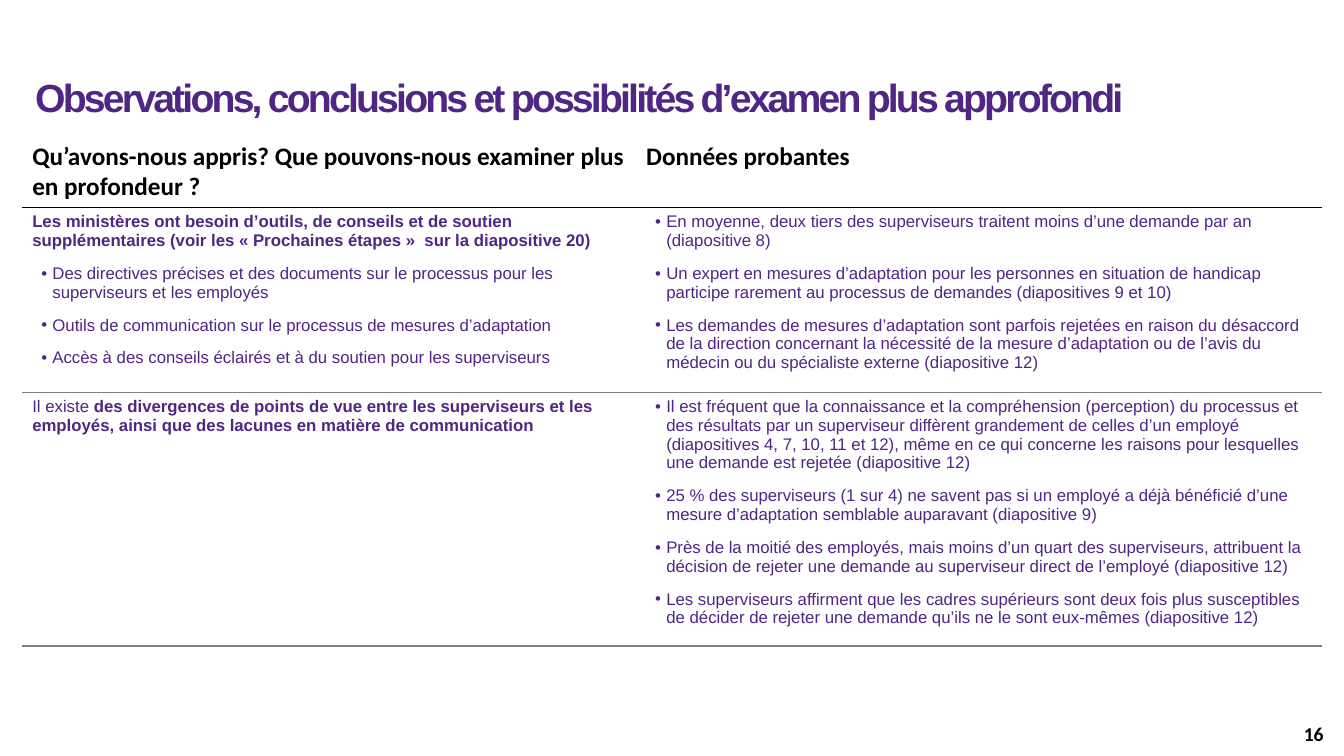
from dataclasses import dataclass
from typing import Any

from lxml import etree
from pptx import Presentation
from pptx.dml.color import RGBColor
from pptx.enum.text import MSO_ANCHOR, MSO_AUTO_SIZE, PP_ALIGN
from pptx.oxml.ns import qn
from pptx.util import Pt

PURPLE = RGBColor(0x4F, 0x26, 0x84)
BLACK = RGBColor(0x00, 0x00, 0x00)
GRAY = RGBColor(0x80, 0x80, 0x80)
LEFT = PP_ALIGN.LEFT
RIGHT = PP_ALIGN.RIGHT
TOP = MSO_ANCHOR.TOP
MIDDLE = MSO_ANCHOR.MIDDLE
NO_FIT = MSO_AUTO_SIZE.NONE
GROW = MSO_AUTO_SIZE.SHAPE_TO_FIT_TEXT
PLAIN_TABLE_STYLE = "{2D5ABB26-0587-4C30-8999-92F81FD0307C}"

TITLE_FONT = {"name": "Arial", "size": Pt(28), "bold": True}
HEADER_FONT = {"name": "Calibri", "size": Pt(18), "bold": True}
BODY_FONT = {"name": "Arial", "size": Pt(12), "bold": False}
BODY_BOLD_FONT = BODY_FONT | {"bold": True}
NUMBER_FONT = {"name": "Calibri", "size": Pt(14), "bold": True}


@dataclass(frozen=True)
class Span:
    text: str
    font: dict[str, Any]
    color: RGBColor = PURPLE


@dataclass(frozen=True)
class Entry:
    spans: tuple[Span, ...]
    bullet: bool = False


@dataclass(frozen=True)
class TableRow:
    height: float
    line_color: RGBColor
    cells: tuple[list[Entry], list[Entry]]


@dataclass(frozen=True)
class Label:
    box: tuple[float, float, float, float]
    span: Span
    frame: dict[str, Any]
    paragraph: dict[str, Any]
    tracking: int = 0


def header(text: str) -> list[Entry]:
    return [Entry((Span(text, HEADER_FONT, BLACK),))]


def bullets(*texts: str) -> list[Entry]:
    return [Entry((Span(text, BODY_FONT),), True) for text in texts]


TITLE = Label(
    (25.2, 54.7, 890.6, 33.1),
    Span("Observations, conclusions et possibilités d’examen plus approfondi", TITLE_FONT),
    {"word_wrap": True, "auto_size": GROW, "vertical_anchor": TOP, "margin_left": 0,
     "margin_right": 0, "margin_top": Pt(1.44), "margin_bottom": Pt(1.44)},
    {"alignment": LEFT, "line_spacing": 0.9},
    -200,
)
PAGE_NUMBER = Label(
    (736.6, 509.8, 216, 28.8),
    Span("16", NUMBER_FONT, BLACK),
    {"word_wrap": True, "auto_size": NO_FIT, "vertical_anchor": MIDDLE},
    {"alignment": RIGHT},
)

TABLE_LEFT, TABLE_TOP = 15.84, 97.2
COLUMN_WIDTHS = (438.5, 490.3)
ROWS = (
    TableRow(51, BLACK, (
        header("Qu’avons-nous appris? Que pouvons-nous examiner plus en profondeur ?"),
        header("Données probantes"),
    )),
    TableRow(132, GRAY, (
        [Entry((Span(
            "Les ministères ont besoin d’outils, de conseils et de soutien supplémentaires "
            "(voir les « Prochaines étapes »  sur la diapositive 20)", BODY_BOLD_FONT),))]
        + bullets(
            "Des directives précises et des documents sur le processus pour les superviseurs "
            "et les employés",
            "Outils de communication sur le processus de mesures d’adaptation",
            "Accès à des conseils éclairés et à du soutien pour les superviseurs",
        ),
        bullets(
            "En moyenne, deux tiers des superviseurs traitent moins d’une demande par an "
            "(diapositive 8)",
            "Un expert en mesures d’adaptation pour les personnes en situation de handicap "
            "participe rarement au processus de demandes (diapositives 9 et 10)",
            "Les demandes de mesures d’adaptation sont parfois rejetées en raison du désaccord "
            "de la direction concernant la nécessité de la mesure d’adaptation ou de l’avis du "
            "médecin ou du spécialiste externe (diapositive 12)",
        ),
    )),
    TableRow(171, GRAY, (
        [Entry((
            Span("Il existe ", BODY_FONT),
            Span("des divergences de points de vue entre les superviseurs et les employés, "
                 "ainsi que des lacunes en matière de communication", BODY_BOLD_FONT),
        ))],
        bullets(
            "Il est fréquent que la connaissance et la compréhension (perception) du processus "
            "et des résultats par un superviseur diffèrent grandement de celles d’un employé "
            "(diapositives 4, 7, 10, 11 et 12), même en ce qui concerne les raisons pour "
            "lesquelles une demande est rejetée (diapositive 12)",
            "25 % des superviseurs (1 sur 4) ne savent pas si un employé a déjà bénéficié d’une "
            "mesure d’adaptation semblable auparavant (diapositive 9)",
            "Près de la moitié des employés, mais moins d’un quart des superviseurs, attribuent "
            "la décision de rejeter une demande au superviseur direct de l’employé (diapositive 12)",
            "Les superviseurs affirment que les cadres supérieurs sont deux fois plus susceptibles "
            "de décider de rejeter une demande qu’ils ne le sont eux-mêmes (diapositive 12)",
        ),
    )),
)


def apply(target: Any, values: dict[str, Any]) -> None:
    for name, value in values.items():
        setattr(target, name, value)


def add_span(paragraph: Any, span: Span) -> Any:
    run = paragraph.add_run()
    run.text = span.text
    apply(run.font, span.font)
    run.font.color.rgb = span.color
    return run


def add_label(slide: Any, label: Label) -> None:
    shape = slide.shapes.add_textbox(*map(Pt, label.box))
    apply(shape.text_frame, label.frame)
    paragraph = shape.text_frame.paragraphs[0]
    apply(paragraph, label.paragraph)
    run = add_span(paragraph, label.span)
    if label.tracking:
        run.font._element.set("spc", str(label.tracking))


def add_bullet(paragraph: Any) -> None:
    properties = paragraph._p.get_or_add_pPr()
    properties.set("marL", str(Pt(14.4)))
    properties.set("indent", str(Pt(-7.92)))
    etree.SubElement(properties, qn("a:buFont"), typeface="Arial")
    etree.SubElement(properties, qn("a:buChar"), char="•")


def fill_cell(cell: Any, entries: list[Entry]) -> None:
    for index, entry in enumerate(entries):
        frame = cell.text_frame
        paragraph = frame.add_paragraph() if index else frame.paragraphs[0]
        if entry.bullet:
            add_bullet(paragraph)
        if index:
            paragraph.space_before = Pt(10)
        for span in entry.spans:
            add_span(paragraph, span)


def add_border(cell: Any, side: str, color: RGBColor) -> None:
    line = etree.SubElement(cell._tc.get_or_add_tcPr(), qn(f"a:{side}"), w=str(Pt(1)))
    fill = etree.SubElement(line, qn("a:solidFill"))
    etree.SubElement(fill, qn("a:srgbClr"), val=str(color))


def add_findings_table(slide: Any) -> None:
    width = sum(COLUMN_WIDTHS)
    height = sum(row.height for row in ROWS)
    table = slide.shapes.add_table(
        len(ROWS), len(COLUMN_WIDTHS), *map(Pt, (TABLE_LEFT, TABLE_TOP, width, height))
    ).table
    apply(table, {"first_row": False, "horz_banding": False})
    table._tbl.tblPr.find(qn("a:tableStyleId")).text = PLAIN_TABLE_STYLE
    for column, column_width in zip(table.columns, COLUMN_WIDTHS):
        column.width = Pt(column_width)
    for row_index, row in enumerate(ROWS):
        table.rows[row_index].height = Pt(row.height)
        for column_index, entries in enumerate(row.cells):
            cell = table.cell(row_index, column_index)
            fill_cell(cell, entries)
            if row_index:
                add_border(cell, "lnT", ROWS[row_index - 1].line_color)
            add_border(cell, "lnB", row.line_color)
            cell.fill.background()


def main() -> None:
    presentation = Presentation()
    apply(presentation, {"slide_width": Pt(960), "slide_height": Pt(540)})
    slide = presentation.slides.add_slide(presentation.slide_layouts[6])
    add_label(slide, TITLE)
    add_findings_table(slide)
    add_label(slide, PAGE_NUMBER)
    presentation.save("out.pptx")


if __name__ == "__main__":
    main()
